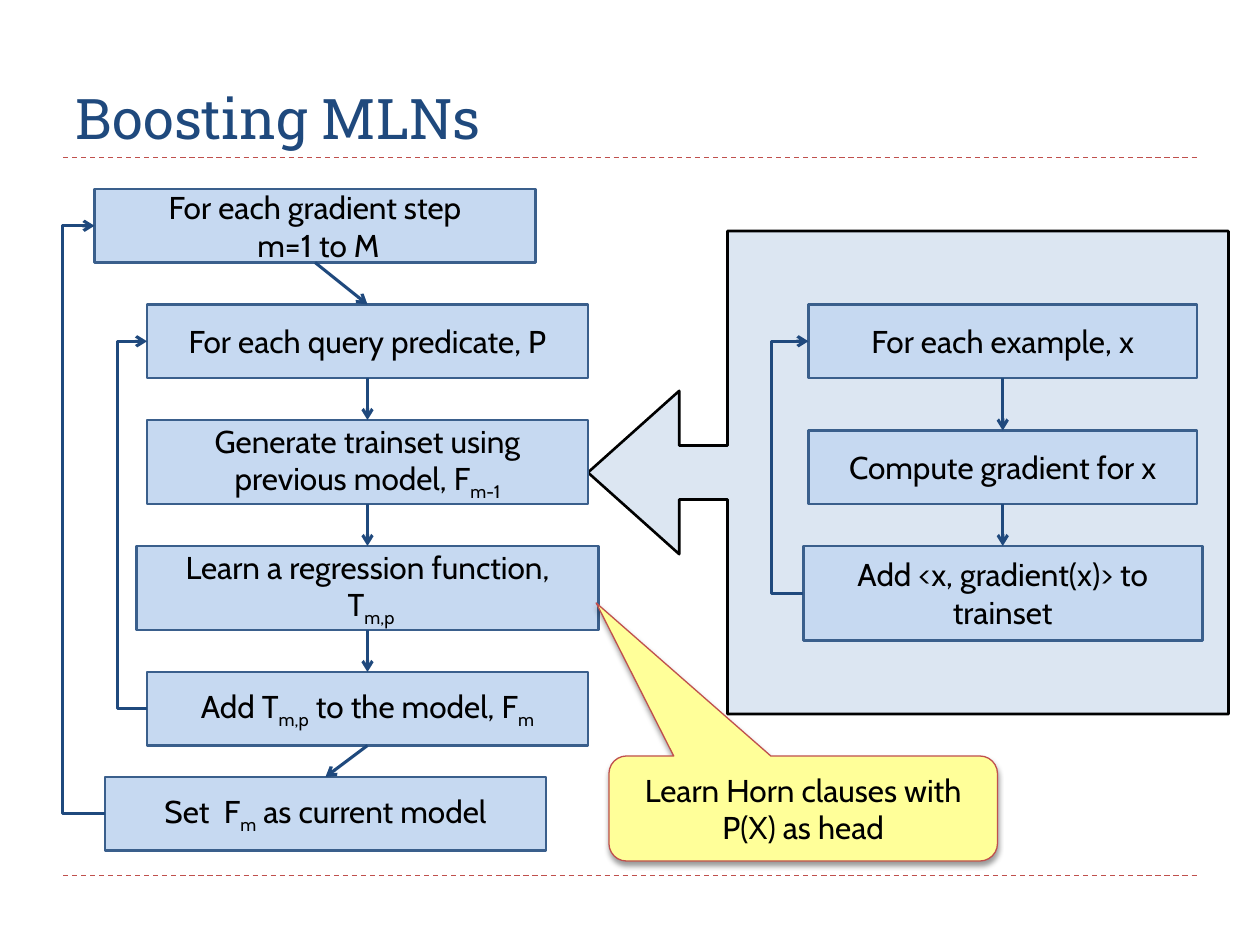
from lxml import etree
from pptx import Presentation, util as u
from pptx.dml.color import RGBColor
from pptx.enum import dml, shapes, text
from pptx.oxml.ns import qn

presentation = Presentation()
presentation.slide_width, presentation.slide_height = u.Inches(10), u.Inches(7.5)
slide = presentation.slides.add_slide(presentation.slide_layouts[5])

UNIT = presentation.slide_width / 120  # grid of 120 columns by 90 rows
NAVY, RED, BLACK = "1F497D", "C0504D", "000000"
color = RGBColor.from_string


def add_box(kind, place, fill, outline, width, content=()):
    """Add a shape; each string is a paragraph whose odd |parts| are subscripts."""
    shape = slide.shapes.add_shape(kind, *[round(v * UNIT) for v in place])
    shape.shadow.inherit = False
    shape.fill.solid()
    shape.fill.fore_color.rgb = color(fill)
    shape.line.color.rgb = color(outline)
    shape.line.width = u.Pt(width)
    frame = shape.text_frame
    frame.word_wrap = True
    frame.vertical_anchor = text.MSO_ANCHOR.MIDDLE
    for i, line in enumerate(content):
        paragraph = frame.add_paragraph() if i else frame.paragraphs[0]
        paragraph.alignment = text.PP_ALIGN.CENTER
        for j, part in enumerate(line.split("|")):
            if not part:
                continue
            run = paragraph.add_run()
            run.text = part
            run.font.name, run.font.size = "Cabin", u.Pt(18)
            run.font.color.rgb = color(BLACK)
            if j % 2:
                run._r.get_or_add_rPr().set("baseline", "-25000")
    return shape


def add_line(kind, start, end, outline, width, arrow=None):
    line = slide.shapes.add_connector(kind, *[round(v * UNIT) for v in (*start, *end)])
    line.line.color.rgb = color(outline)
    line.line.width = u.Pt(width)
    if arrow:
        etree.SubElement(line.line._get_or_add_ln(), qn("a:tailEnd"), type=arrow)
    etree.SubElement(line._element.spPr, qn("a:effectLst"))
    return line


# Title between dashed rules
title = slide.shapes.title
title.left, title.top, title.width, title.height = [round(v * UNIT) for v in (6, 2, 108, 13)]
title.text_frame.vertical_anchor = text.MSO_ANCHOR.BOTTOM
paragraph = title.text_frame.paragraphs[0]
paragraph.alignment = text.PP_ALIGN.LEFT
run = paragraph.add_run()
run.text = "Boosting MLNs"
run.font.name, run.font.size = "Roboto Slab", u.Pt(32)
run.font.color.rgb = color(NAVY)
STRAIGHT, ELBOW = shapes.MSO_CONNECTOR.STRAIGHT, shapes.MSO_CONNECTOR.ELBOW
for row in (15, 83.4):
    rule = add_line(STRAIGHT, (6, row), (114, row), RED, 0.75)
    rule.line.dash_style = dml.MSO_LINE.DASH

# Panel pointing at the trainset step
panel = add_box(shapes.MSO_SHAPE.LEFT_ARROW_CALLOUT, (56, 22, 61, 46), "DCE6F2", BLACK, 1.5)
for i, value in enumerate((0.112, 0.169, 0.189, 0.782)):
    panel.adjustments[i] = value

# Steps of the main loop and of the example loop
main_steps = [
    ((9, 18, 42, 7), ["For each gradient step", " m=1 to M"]),
    ((14, 29, 42, 7), ["For each query predicate, P"]),
    ((14, 40, 42, 8), ["Generate trainset using", "previous model, F|m-1"]),
    ((13, 52, 44, 8), ["Learn a regression function,", " T|m,p"]),
    ((14, 64, 42, 7), ["Add T|m,p| to the model, F|m"]),
    ((10, 74, 42, 7), ["Set  F|m| as current model"]),
]
example_steps = [
    ((77, 29, 37, 7), ["For each example, x"]),
    ((77, 41, 37, 7), ["Compute gradient for x"]),
    ((76.5, 52, 38, 9), ["Add <x, gradient(x)> to trainset"]),
]
for steps in (main_steps, example_steps):
    for place, content in steps:
        add_box(shapes.MSO_SHAPE.RECTANGLE, place, "C6D9F1", "3A5F8C", 1.5, content)
    # Arrows from bottom centre to the next top centre
    for ((x, y, w, h), _), ((next_x, next_y, next_w, _), _) in zip(steps, steps[1:]):
        add_line(STRAIGHT, (x + w / 2, y + h), (next_x + next_w / 2, next_y), NAVY, 1.75, "arrow")

# Loops back: last step, first step, column of the vertical run
loops = [
    (main_steps[4], main_steps[1], 11),
    (main_steps[5], main_steps[0], 6),
    (example_steps[2], example_steps[0], 73.5),
]
for (last, _), (first, _), column in loops:
    tip_x, tail_x = first[0], last[0]
    if tip_x == tail_x:
        tail_x += 0.02  # the bend is a share of the width, which must not be zero
    tip = (tip_x, first[1] + first[3] / 2)
    tail = (tail_x, last[1] + last[3] / 2)
    # Half a turn makes the drawn line run from tail to tip
    loop = add_line(ELBOW, tip, tail, NAVY, 1.75, "arrow")
    loop._element.spPr.find(qn("a:xfrm")).set("rot", "10800000")
    bend = round((column - tail_x) / (tip_x - tail_x) * 100000)
    guides = loop._element.spPr.find(qn("a:prstGeom")).get_or_add_avLst()
    etree.SubElement(guides, qn("a:gd"), name="adj1", fmla=f"val {bend}")

# Yellow remark with a soft shadow
remark = add_box(shapes.MSO_SHAPE.ROUNDED_RECTANGULAR_CALLOUT, (58, 72, 37, 10),
                 "FFFF99", RED, 0.75, ["Learn Horn clauses with P(X) as head"])
for i, value in enumerate((-0.533, -1.958, 0.167)):
    remark.adjustments[i] = value
effects = remark._element.spPr.find(qn("a:effectLst"))
shadow = etree.SubElement(effects, qn("a:outerShdw"), blurRad=str(u.Pt(3)),
                          dist=str(u.Pt(2)), dir="5400000", rotWithShape="0")
shade = etree.SubElement(shadow, qn("a:srgbClr"), val=BLACK)
etree.SubElement(shade, qn("a:alpha"), val="40000")

presentation.save("out.pptx")
